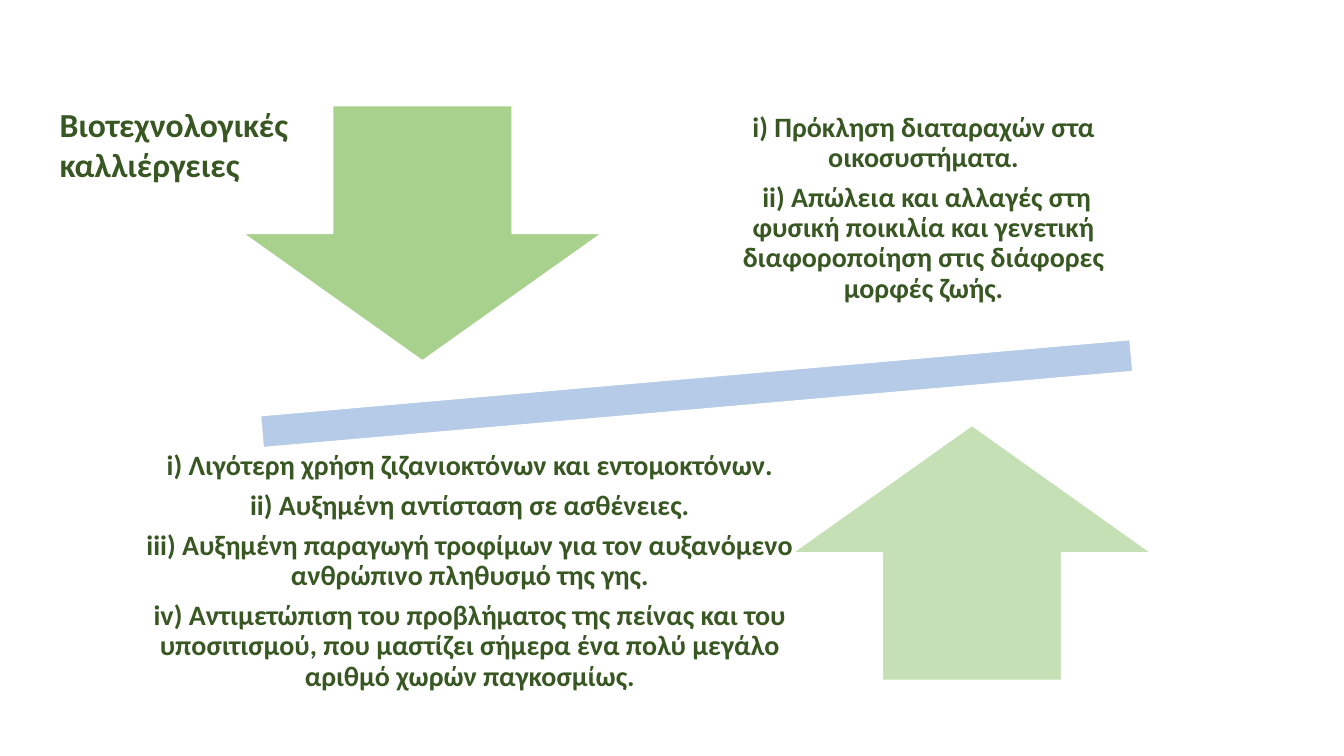
from dataclasses import dataclass

from lxml.etree import SubElement
from pptx import Presentation
from pptx.dml.color import RGBColor
from pptx.enum.shapes import MSO_SHAPE as Preset
from pptx.enum.text import MSO_ANCHOR as Anchor, MSO_AUTO_SIZE as AutoSize, PP_ALIGN as Align
from pptx.oxml.ns import qn
from pptx.util import Inches, Pt


@dataclass(frozen=True)
class Theme:
    font: str = "Calibri"
    text: RGBColor = RGBColor(0x38, 0x57, 0x23)
    outline: RGBColor = RGBColor(0xFF, 0xFF, 0xFF)
    beam: RGBColor = RGBColor(0xB5, 0xCB, 0xE7)
    down: RGBColor = RGBColor(0xA9, 0xD1, 0x8E)
    up: RGBColor = RGBColor(0xC5, 0xE0, 0xB4)
    heading_size: Pt = Pt(24)
    list_size: Pt = Pt(20)


theme = Theme()


def place(shape, left, top, width, height):
    shape.left, shape.top = Inches(left), Inches(top)
    shape.width, shape.height = Inches(width), Inches(height)


def add_text(paragraph, text, size):
    run = paragraph.add_run()
    run.text = text
    run.font.name = theme.font
    run.font.size = size
    run.font.bold = True
    run.font.color.rgb = theme.text


presentation = Presentation()
presentation.slide_width = Inches(13.33)
presentation.slide_height = Inches(7.5)
slide = presentation.slides.add_slide(presentation.slide_layouts[3])
title, drawbacks, benefits = slide.placeholders

# Heading
place(title, 0.49, 0.98, 2.65, 0.91)
frame = title.text_frame
frame.word_wrap = True
frame.auto_size = AutoSize.NONE
frame.vertical_anchor = Anchor.TOP
frame.paragraphs[0].alignment = Align.LEFT
add_text(frame.paragraphs[0], "Βιοτεχνολογικές καλλιέργειες", theme.heading_size)

# Tilted beam and the two arrows
for preset, box, color, rotation in (
    (Preset.MATH_MINUS, (1.02, 3.23, 11.78, 1.35), theme.beam, 355),
    (Preset.DOWN_ARROW, (2.41, 1.05, 3.56, 2.53), theme.down, 0),
    (Preset.UP_ARROW, (7.86, 4.22, 3.56, 2.53), theme.up, 0),
):
    shape = slide.shapes.add_shape(preset, *map(Inches, box))
    shape.rotation = rotation
    shape.shadow.inherit = False
    shape.fill.solid()
    shape.fill.fore_color.rgb = color
    shape.line.color.rgb = theme.outline
    shape.line.width = Pt(1)

# Drawbacks above the beam, benefits below it
for body, box, items in (
    (drawbacks, (6.9, 0.74, 4.52, 2.66), (
        "i) Πρόκληση διαταραχών στα οικοσυστήματα.",
        " ii) Απώλεια και αλλαγές στη φυσική ποικιλία και γενετική "
        "διαφοροποίηση στις διάφορες μορφές ζωής.",
    )),
    (benefits, (1.05, 4.34, 7.22, 2.66), (
        "i) Λιγότερη χρήση ζιζανιοκτόνων και εντομοκτόνων.",
        "ii) Αυξημένη αντίσταση σε ασθένειες.",
        "iii) Αυξημένη παραγωγή τροφίμων για τον αυξανόμενο "
        "ανθρώπινο πληθυσμό της γης.",
        "iv) Αντιμετώπιση του προβλήματος της πείνας και του υποσιτισμού, "
        "που μαστίζει σήμερα ένα πολύ μεγάλο αριθμό χωρών παγκοσμίως.",
    )),
):
    place(body, *box)
    frame = body.text_frame
    frame.word_wrap = True
    frame.auto_size = AutoSize.NONE
    frame.vertical_anchor = Anchor.MIDDLE
    frame.margin_left = frame.margin_right = Inches(0.16)
    frame.margin_top = frame.margin_bottom = Inches(0.16)
    for number, item in enumerate(items):
        paragraph = frame.add_paragraph() if number else frame.paragraphs[0]
        paragraph.alignment = Align.CENTER
        paragraph.line_spacing = 0.9
        paragraph.space_before = Pt(0)
        paragraph.space_after = Pt(7)
        properties = paragraph._p.get_or_add_pPr()
        properties.set("marL", "0")
        properties.set("indent", "0")
        SubElement(properties, qn("a:buNone"))
        add_text(paragraph, item, theme.list_size)

presentation.save("out.pptx")
